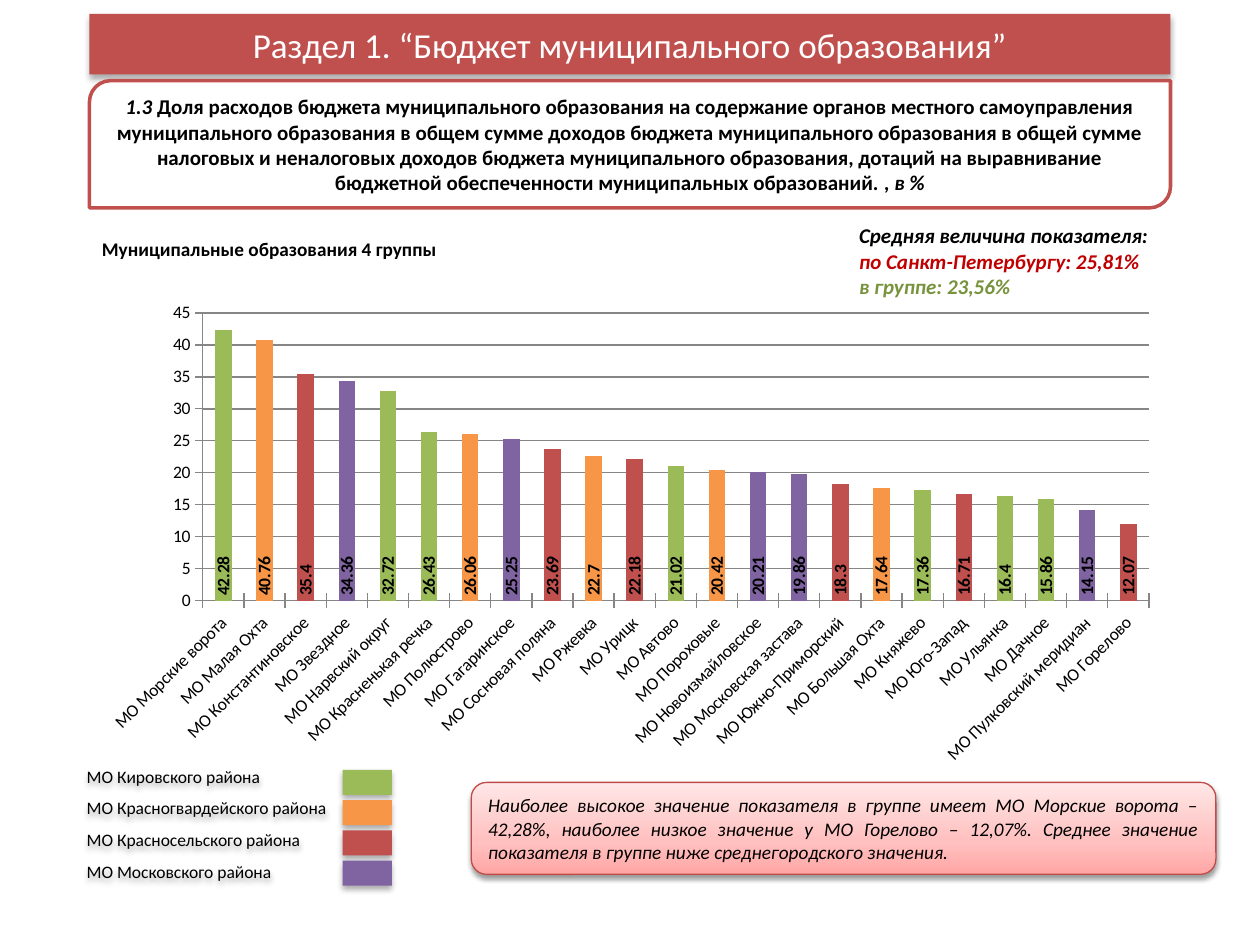
import copy
from dataclasses import dataclass
import pptx
import pptx.chart.data
import pptx.dml.color
import pptx.enum.chart
import pptx.enum.shapes
import pptx.enum.text
import pptx.oxml
import pptx.oxml.ns
import pptx.util
from pptx.util import Inches

FONT = "Calibri"
COLORS = {
    "red": "C0504D", "green": "9BBB59", "orange": "F79646", "purple": "8064A2",
    "white": "FFFFFF", "black": "000000", "grid": "868686", "callout_line": "BF4C48",
    "city": "C00000", "group": "77933C",
    "pink_dark": "FFA6A5", "pink": "FFC0BF", "pink_light": "FFE7E7",
}
SHAPES = pptx.enum.shapes.MSO_SHAPE
ALIGN = pptx.enum.text.PP_ALIGN
qn = pptx.oxml.ns.qn


@dataclass
class Box:
    left: float
    top: float
    width: float
    height: float

    def emu(self) -> tuple:
        return tuple(Inches(v) for v in (self.left, self.top, self.width, self.height))


@dataclass
class Run:
    text: str
    size: float
    color: str = "black"
    bold: bool = False
    italic: bool = False


@dataclass
class District:
    name: str
    color: str


@dataclass
class Municipality:
    name: str
    share: float
    color: str


DISTRICTS = [
    District("МО Кировского района", "green"),
    District("МО Красногвардейского района", "orange"),
    District("МО Красносельского района", "red"),
    District("МО Московского района", "purple"),
]
MUNICIPALITIES = [
    Municipality("МО Морские ворота", 42.28, "green"),
    Municipality("МО Малая Охта", 40.76, "orange"),
    Municipality("МО Константиновское", 35.4, "red"),
    Municipality("МО Звездное", 34.36, "purple"),
    Municipality("МО Нарвский округ", 32.72, "green"),
    Municipality("МО Красненькая речка", 26.43, "green"),
    Municipality("МО Полюстрово", 26.06, "orange"),
    Municipality("МО Гагаринское", 25.25, "purple"),
    Municipality("МО Сосновая поляна", 23.69, "red"),
    Municipality("МО Ржевка", 22.7, "orange"),
    Municipality("МО Урицк", 22.18, "red"),
    Municipality("МО Автово", 21.02, "green"),
    Municipality("МО Пороховые", 20.42, "orange"),
    Municipality("МО Новоизмайловское", 20.21, "purple"),
    Municipality("МО Московская застава", 19.86, "purple"),
    Municipality("МО Южно-Приморский", 18.3, "red"),
    Municipality("МО Большая Охта", 17.64, "orange"),
    Municipality("МО Княжево", 17.36, "green"),
    Municipality("МО Юго-Запад", 16.71, "red"),
    Municipality("МО Ульянка", 16.4, "green"),
    Municipality("МО Дачное", 15.86, "green"),
    Municipality("МО Пулковский меридиан", 14.15, "purple"),
    Municipality("МО Горелово", 12.07, "red"),
]


def rgb(name: str) -> pptx.dml.color.RGBColor:
    return pptx.dml.color.RGBColor.from_string(COLORS[name])


def add_shadow(sp, alpha: int = 32, blur: float = 3.5, dist: float = 2.2) -> None:
    sp.shadow.inherit = False
    effects = sp._element.spPr.find(qn("a:effectLst"))
    effects.append(pptx.oxml.parse_xml(
        f'<a:outerShdw {pptx.oxml.ns.nsdecls("a")} blurRad="{pptx.util.Pt(blur)}" '
        f'dist="{pptx.util.Pt(dist)}" dir="5400000" algn="ctr" rotWithShape="0">'
        f'<a:srgbClr val="{COLORS["black"]}"><a:alpha val="{alpha * 1000}"/></a:srgbClr>'
        '</a:outerShdw>'))


def write(sp, paragraphs: list[list[Run]], align=ALIGN.LEFT, wrap: bool = True,
          space_after: float = 0) -> None:
    tf = sp.text_frame
    tf.word_wrap = wrap
    for i, runs in enumerate(paragraphs):
        p = tf.paragraphs[0] if i == 0 else tf.add_paragraph()
        p.alignment = align
        p.space_after = pptx.util.Pt(space_after)
        for run in runs:
            r = p.add_run()
            r.text = run.text
            r.font.name = FONT
            r.font.size = pptx.util.Pt(run.size)
            r.font.bold, r.font.italic = run.bold, run.italic
            r.font.color.rgb = rgb(run.color)


def add_block(slide, kind, box: Box, fill: str, line: str = "", width: float = 1):
    sp = slide.shapes.add_shape(kind, *box.emu())
    sp.shadow.inherit = False
    sp.fill.solid()
    sp.fill.fore_color.rgb = rgb(fill)
    if line:
        sp.line.color.rgb = rgb(line)
        sp.line.width = pptx.util.Pt(width)
    else:
        sp.line.fill.background()
    return sp


def add_title(slide, box: Box, text: str) -> None:
    sp = slide.shapes.title
    sp.left, sp.top, sp.width, sp.height = box.emu()
    sp._element.spPr.append(pptx.oxml.parse_xml(
        f'<a:prstGeom {pptx.oxml.ns.nsdecls("a")} prst="roundRect"><a:avLst/></a:prstGeom>'))
    sp.fill.solid()
    sp.fill.fore_color.rgb = rgb("red")
    add_shadow(sp)
    write(sp, [[Run(text, 20, "white")]], ALIGN.CENTER)
    sp.text_frame.auto_size = pptx.enum.text.MSO_AUTO_SIZE.NONE


def add_callout(slide, box: Box, text: str) -> None:
    sp = add_block(slide, SHAPES.ROUNDED_RECTANGLE, box, "pink", "callout_line", 0.75)
    sp.fill.gradient()
    sp.fill.gradient_angle = 90
    stops = sp._element.spPr.find(".//" + qn("a:gsLst"))
    stops.append(copy.deepcopy(stops[0]))
    for stop, (at, color) in zip(sp.fill.gradient_stops,
                                 [(0, "pink_dark"), (0.35, "pink"), (1, "pink_light")]):
        stop.position = at
        stop.color.rgb = rgb(color)
    add_shadow(sp, 38, 3.1, 1.6)
    write(sp, [[Run(text, 11, italic=True)]], ALIGN.JUSTIFY)


def add_share_chart(slide, box: Box) -> None:
    data = pptx.chart.data.CategoryChartData()
    data.categories = [m.name for m in MUNICIPALITIES]
    data.add_series("Series 1", [m.share for m in MUNICIPALITIES])
    chart = slide.shapes.add_chart(
        pptx.enum.chart.XL_CHART_TYPE.COLUMN_CLUSTERED, *box.emu(), data).chart
    chart.has_legend = chart.has_title = False
    chart.font.name, chart.font.size = FONT, pptx.util.Pt(10)
    chart.font.color.rgb = rgb("black")
    for axis in (chart.category_axis, chart.value_axis):
        axis.major_tick_mark = pptx.enum.chart.XL_TICK_MARK.CROSS
        axis.format.line.color.rgb = rgb("grid")
    names = chart.category_axis.tick_labels.font
    names.size = pptx.util.Pt(10)
    chart.category_axis._element.find(".//" + qn("a:bodyPr")).set("rot", "-2700000")
    axis = chart.value_axis
    axis.minimum_scale, axis.maximum_scale, axis.major_unit = 0, 45, 5
    axis.major_gridlines.format.line.color.rgb = rgb("grid")
    plot = chart.plots[0]
    plot.gap_width, plot.vary_by_categories = 150, False
    series = plot.series[0]
    series.format.fill.solid()
    series.format.fill.fore_color.rgb = rgb("green")
    for i, m in enumerate(MUNICIPALITIES):
        if m.color != "green":
            fill = series.points[i].format.fill
            fill.solid()
            fill.fore_color.rgb = rgb(m.color)
    labels = series.data_labels
    labels.show_value = True
    labels.position = pptx.enum.chart.XL_LABEL_POSITION.INSIDE_BASE
    labels.font.bold, labels.font.size = True, pptx.util.Pt(10)
    labels._element.find(".//" + qn("a:bodyPr")).set("rot", "-5400000")


def main() -> None:
    prs = pptx.Presentation()
    prs.slide_width, prs.slide_height = Inches(10), Inches(7.5)
    slide = prs.slides.add_slide(prs.slide_layouts[5])
    add_title(slide, Box(0.71, 0.11, 8.58, 0.48), "Раздел 1. “Бюджет муниципального образования”")
    sp = add_block(slide, SHAPES.ROUND_2_DIAG_RECTANGLE, Box(0.71, 0.64, 8.58, 1.01), "white", "red", 2)
    write(sp, [[
        Run("1.3 ", 12, bold=True, italic=True),
        Run("Доля расходов бюджета муниципального образования на содержание органов местного "
            "самоуправления муниципального образования в общем сумме доходов бюджета муниципального "
            "образования в общей сумме налоговых и неналоговых доходов бюджета муниципального "
            "образования, дотаций на выравнивание бюджетной обеспеченности муниципальных "
            "образований. ", 12, bold=True),
        Run(", в %", 12, bold=True, italic=True)]], ALIGN.CENTER)
    sp = slide.shapes.add_textbox(*Box(0.71, 1.83, 2.95, 0.29).emu())
    write(sp, [[Run("Муниципальные образования 4 группы", 11, bold=True)]])
    sp = slide.shapes.add_textbox(*Box(6.72, 1.72, 2.53, 0.71).emu())
    averages = [("Средняя величина показателя:", "black"),
                ("по Санкт-Петербургу: 25,81%", "city"), ("в группе: 23,56%", "group")]
    write(sp, [[Run(text, 12, color, True, True)] for text, color in averages], wrap=False)
    sp = slide.shapes.add_textbox(*Box(0.59, 6.03, 2.84, 1.03).emu())
    add_shadow(sp)
    write(sp, [[Run(d.name, 10)] for d in DISTRICTS], space_after=6)
    for i, d in enumerate(DISTRICTS):
        add_shadow(add_block(slide, SHAPES.RECTANGLE, Box(2.72, 6.11 + 0.24 * i, 0.39, 0.2), d.color))
    add_callout(slide, Box(3.74, 6.21, 5.91, 0.73),
                "Наиболее высокое значение показателя в группе имеет МО Морские ворота – 42,28%, "
                "наиболее низкое значение у МО Горелово – 12,07%. Среднее значение показателя в "
                "группе ниже среднегородского значения.")
    add_share_chart(slide, Box(0.71, 2.33, 8.58, 3.81))
    prs.save("out.pptx")


if __name__ == "__main__":
    main()
